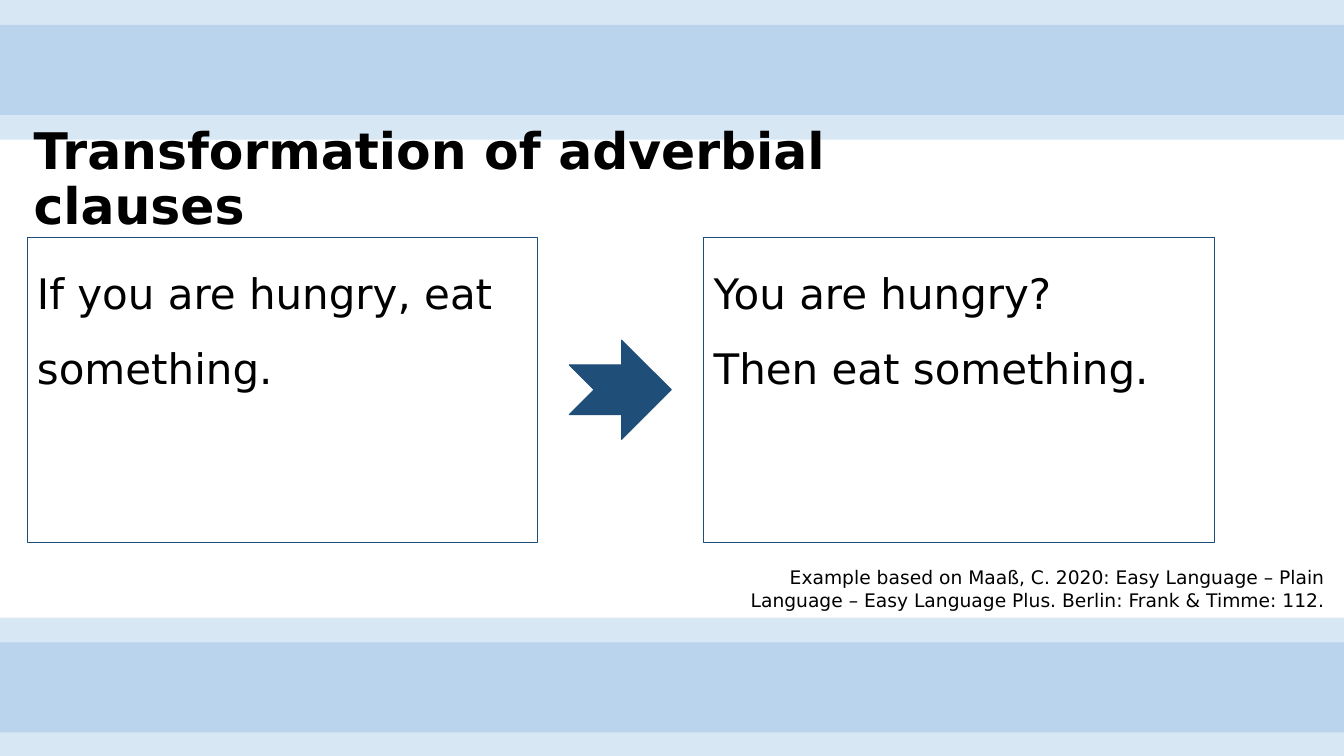
"""Build a slide showing how an adverbial clause is transformed in Easy Language."""
from lxml.etree import SubElement
from pptx import Presentation
from pptx.dml.color import RGBColor
from pptx.enum.shapes import MSO_SHAPE as Shape
from pptx.enum.text import MSO_ANCHOR as Anchor, PP_ALIGN as Align
from pptx.oxml.ns import qn
from pptx.util import Inches, Pt

TITLE = "Transformation of adverbial clauses"
CLAUSES = [
    ["If you are hungry, eat something."],
    ["You are hungry?", "Then eat something."],
]
CITATION = ("Example based on Maaß, C. 2020: Easy Language – Plain Language – "
            "Easy Language Plus. Berlin: Frank & Timme: 112.")

FONT = "DejaVu Sans"
BLACK = RGBColor(0, 0, 0)
NAVY = RGBColor(0x1F, 0x4E, 0x79)
SKY = RGBColor(0x5B, 0x9B, 0xD5)

WIDTH, HEIGHT = 20, 11.25
BAND_HEIGHT, BAND_SHIFT = 1.71, 0.37
BOX_LEFT, BOX_TOP, BOX_WIDTH, BOX_HEIGHT = 0.4, 3.53, 7.6, 4.54
BOX_PITCH = 10.07
ARROW_WIDTH, ARROW_HEIGHT = 1.52, 1.48
ARROW_LEFT = 8.47


def add_shape(slide, preset, left, top, width, height):
    shape = slide.shapes.add_shape(preset, *map(Inches, (left, top, width, height)))
    shape.shadow.inherit = False
    return shape


def add_band(slide, top):
    band = add_shape(slide, Shape.RECTANGLE, 0, top, WIDTH, BAND_HEIGHT)
    band.fill.solid()
    band.fill.fore_color.rgb = SKY
    color = band.fill._xPr.find(qn("a:solidFill"))[0]
    SubElement(color, qn("a:alpha"), val="24000")
    band.line.fill.background()


def write(shape, lines, size, spacing=1, anchor=Anchor.TOP, align=Align.LEFT, bold=False):
    frame = shape.text_frame
    frame.word_wrap = True
    frame.vertical_anchor = anchor
    frame.margin_left = frame.margin_right = Inches(0.15)
    frame.margin_top = frame.margin_bottom = Inches(0.07)
    frame.text = "\n".join(lines)
    for paragraph in frame.paragraphs:
        paragraph.alignment = align
        paragraph.line_spacing = spacing
        font = paragraph.font
        font.name, font.size, font.bold = FONT, Pt(size), bold
        font.color.rgb = BLACK


def add_text(slide, left, top, width, height, *args, **style):
    write(slide.shapes.add_textbox(*map(Inches, (left, top, width, height))), *args, **style)


def main():
    deck = Presentation()
    deck.slide_width, deck.slide_height = Inches(WIDTH), Inches(HEIGHT)
    slide = deck.slides.add_slide(deck.slide_layouts[6])

    bottom = HEIGHT - BAND_HEIGHT + 0.02
    for top in (bottom, bottom - BAND_SHIFT, 0, BAND_SHIFT):
        add_band(slide, top)

    add_text(slide, 10.77, 8.34, 9.09, 0.82, [CITATION], 20,
             anchor=Anchor.BOTTOM, align=Align.RIGHT)

    arrow = add_shape(slide, Shape.NOTCHED_RIGHT_ARROW, ARROW_LEFT,
                      BOX_TOP + (BOX_HEIGHT - ARROW_HEIGHT) / 2, ARROW_WIDTH, ARROW_HEIGHT)
    arrow.fill.solid()
    arrow.fill.fore_color.rgb = NAVY
    arrow.line.color.rgb = NAVY
    arrow.line.width = Pt(1)

    for column, lines in enumerate(CLAUSES):
        box = add_shape(slide, Shape.RECTANGLE, BOX_LEFT + column * BOX_PITCH,
                        BOX_TOP, BOX_WIDTH, BOX_HEIGHT)
        box.fill.background()
        box.line.color.rgb = NAVY
        box.line.width = Pt(0.75)
        write(box, lines, 45, spacing=1.5)

    add_text(slide, 0.35, 2.11, 13.31, 1.16, [TITLE], 54,
             spacing=0.9, anchor=Anchor.MIDDLE, bold=True)

    deck.save("out.pptx")


if __name__ == "__main__":
    main()
